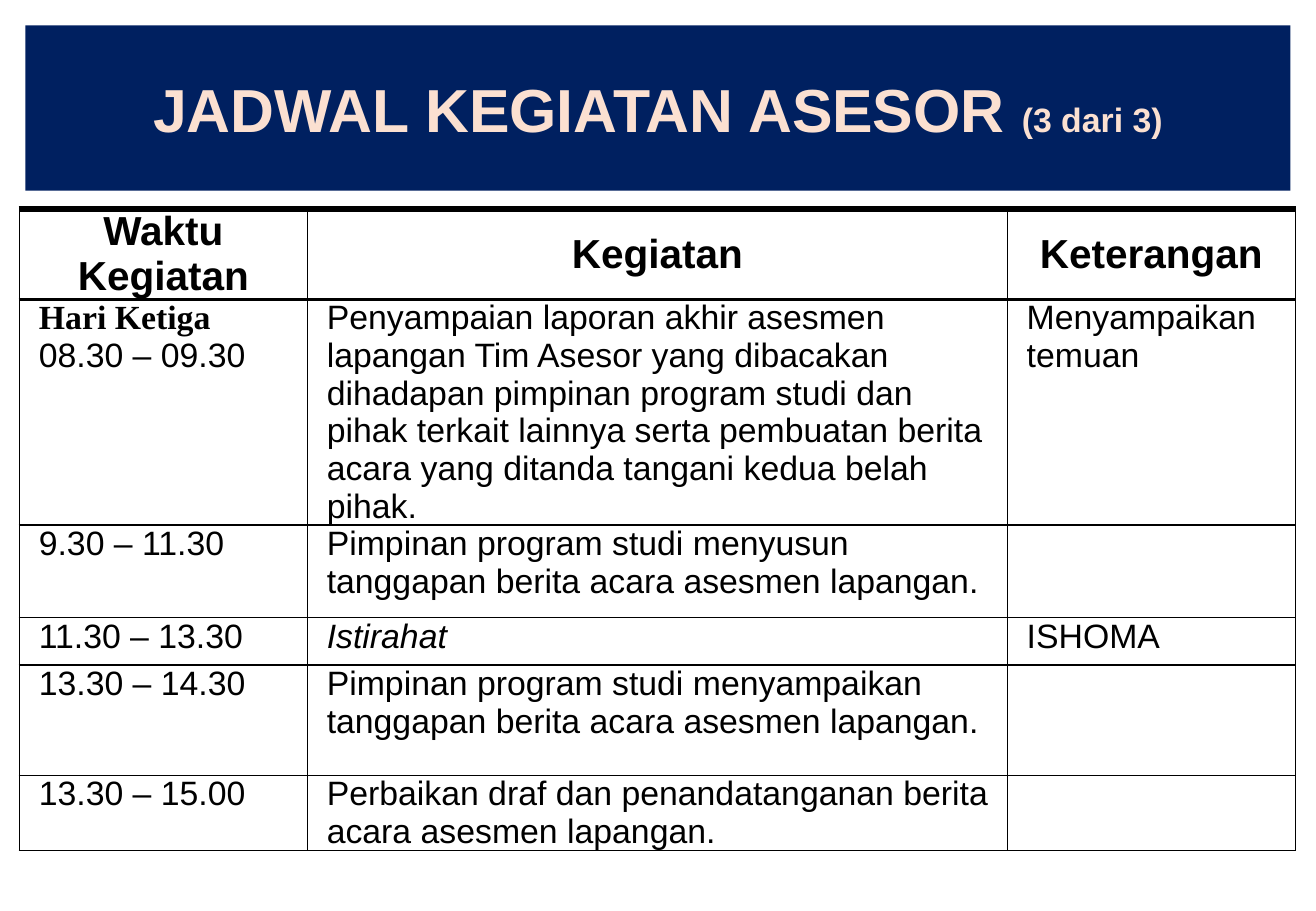
from lxml import etree
from pptx import Presentation
from pptx.dml.color import RGBColor
from pptx.enum import shapes, text
from pptx.oxml import ns
from pptx.util import Inches, Pt

NAVY = RGBColor(0x00, 0x20, 0x60)
PEACH = RGBColor(0xFB, 0xE0, 0xD1)
BLACK = RGBColor(0x00, 0x00, 0x00)

BODY = {"name": "Arial", "size": Pt(20), "bold": False, "italic": False}
HEADER = BODY | {"size": Pt(24), "bold": True}
BREAK = BODY | {"italic": True}
DAY = BODY | {"name": "Times New Roman", "bold": True}

TITLE = [
    ("JADWAL KEGIATAN ASESOR ", BODY | {"size": Pt(36), "bold": True}),
    ("(3 dari 3)", BODY | {"bold": True}),
]
# Each cell is a list of (paragraph, format) pairs.
SCHEDULE = [
    [[("Waktu Kegiatan", HEADER)], [("Kegiatan", HEADER)], [("Keterangan", HEADER)]],
    [
        [("Hari Ketiga", DAY), ("08.30 – 09.30", BODY)],
        [("Penyampaian laporan akhir asesmen lapangan Tim Asesor yang dibacakan "
          "dihadapan pimpinan program studi dan pihak terkait lainnya serta pembuatan "
          "berita acara yang ditanda tangani kedua belah pihak.", BODY)],
        [("Menyampaikan temuan", BODY)],
    ],
    [
        [("9.30 – 11.30", BODY)],
        [("Pimpinan program studi menyusun tanggapan berita acara asesmen lapangan.", BODY)],
        [],
    ],
    [[("11.30 – 13.30", BODY)], [("Istirahat", BREAK)], [("ISHOMA", BODY)]],
    [
        [("13.30 – 14.30", BODY)],
        [("Pimpinan program studi menyampaikan tanggapan berita acara asesmen lapangan.", BODY)],
        [],
    ],
    [
        [("13.30 – 15.00", BODY)],
        [("Perbaikan draf dan penandatanganan berita acara asesmen lapangan.", BODY)],
        [],
    ],
]
COLUMN_WIDTHS = [2.37, 5.76, 2.37]
ROW_HEIGHTS = [0.74, 1.86, 0.76, 0.39, 0.91, 0.62]
RULES = [3.75, 2.25, 1, 1, 1, 1, 1]  # horizontal line widths, top to bottom
SIDE_RULE = 1


def add_span(para, words, font_format, color):
    span = para.add_run()
    span.text = words
    for name, value in font_format.items():
        setattr(span.font, name, value)
    span.font.color.rgb = color


def set_borders(cell, widths):
    """Draw black cell borders; widths are in points: left, right, top, bottom."""
    properties = cell._tc.get_or_add_tcPr()
    for index, (side, width) in enumerate(zip("LRTB", widths)):
        line = etree.Element(ns.qn(f"a:ln{side}"), w=str(Pt(width)))
        fill = etree.SubElement(line, ns.qn("a:solidFill"))
        etree.SubElement(fill, ns.qn("a:srgbClr"), val=str(BLACK))
        properties.insert(index, line)


def add_title(page):
    box = page.shapes.add_shape(shapes.MSO_SHAPE.RECTANGLE, Inches(0.21), Inches(0.21),
                                Inches(10.41), Inches(1.36))
    box.shadow.inherit = False
    box.fill.solid()
    box.fill.fore_color.rgb = NAVY
    box.line.fill.background()
    box.text_frame.word_wrap = True
    box.text_frame.vertical_anchor = text.MSO_ANCHOR.MIDDLE
    para = box.text_frame.paragraphs[0]
    para.alignment = text.PP_ALIGN.CENTER
    for words, font_format in TITLE:
        add_span(para, words, font_format, PEACH)


def fill_cell(cell, paragraphs, is_header):
    inset = Inches(0.04 if is_header else 0.08)
    anchor = text.MSO_ANCHOR.MIDDLE if is_header else text.MSO_ANCHOR.TOP
    layout = {"margin_left": inset, "margin_right": inset, "margin_top": 0,
              "margin_bottom": 0, "vertical_anchor": anchor}
    for name, value in layout.items():
        setattr(cell, name, value)
    for index, (words, font_format) in enumerate(paragraphs):
        frame = cell.text_frame
        para = frame.add_paragraph() if index else frame.paragraphs[0]
        if is_header:
            para.alignment = text.PP_ALIGN.CENTER
        else:
            para._p.get_or_add_pPr().set("marL", str(Inches(0.08)))
        add_span(para, words, font_format, BLACK)


def add_schedule(page):
    table = page.shapes.add_table(len(SCHEDULE), len(COLUMN_WIDTHS), Inches(0.16), Inches(1.72),
                                  Inches(sum(COLUMN_WIDTHS)), Inches(sum(ROW_HEIGHTS))).table
    table.first_row = table.horz_banding = False
    for column, width in zip(table.columns, COLUMN_WIDTHS):
        column.width = Inches(width)
    for row_index, (row, height) in enumerate(zip(table.rows, ROW_HEIGHTS)):
        row.height = Inches(height)
        for cell, paragraphs in zip(row.cells, SCHEDULE[row_index]):
            cell.fill.background()
            fill_cell(cell, paragraphs, row_index == 0)
            set_borders(cell, [SIDE_RULE, SIDE_RULE, *RULES[row_index:row_index + 2]])


def main():
    deck = Presentation()
    deck.slide_width, deck.slide_height = Inches(10.83), Inches(7.5)
    page = deck.slides.add_slide(deck.slide_layouts[6])
    add_schedule(page)
    add_title(page)
    deck.save("out.pptx")


if __name__ == "__main__":
    main()
